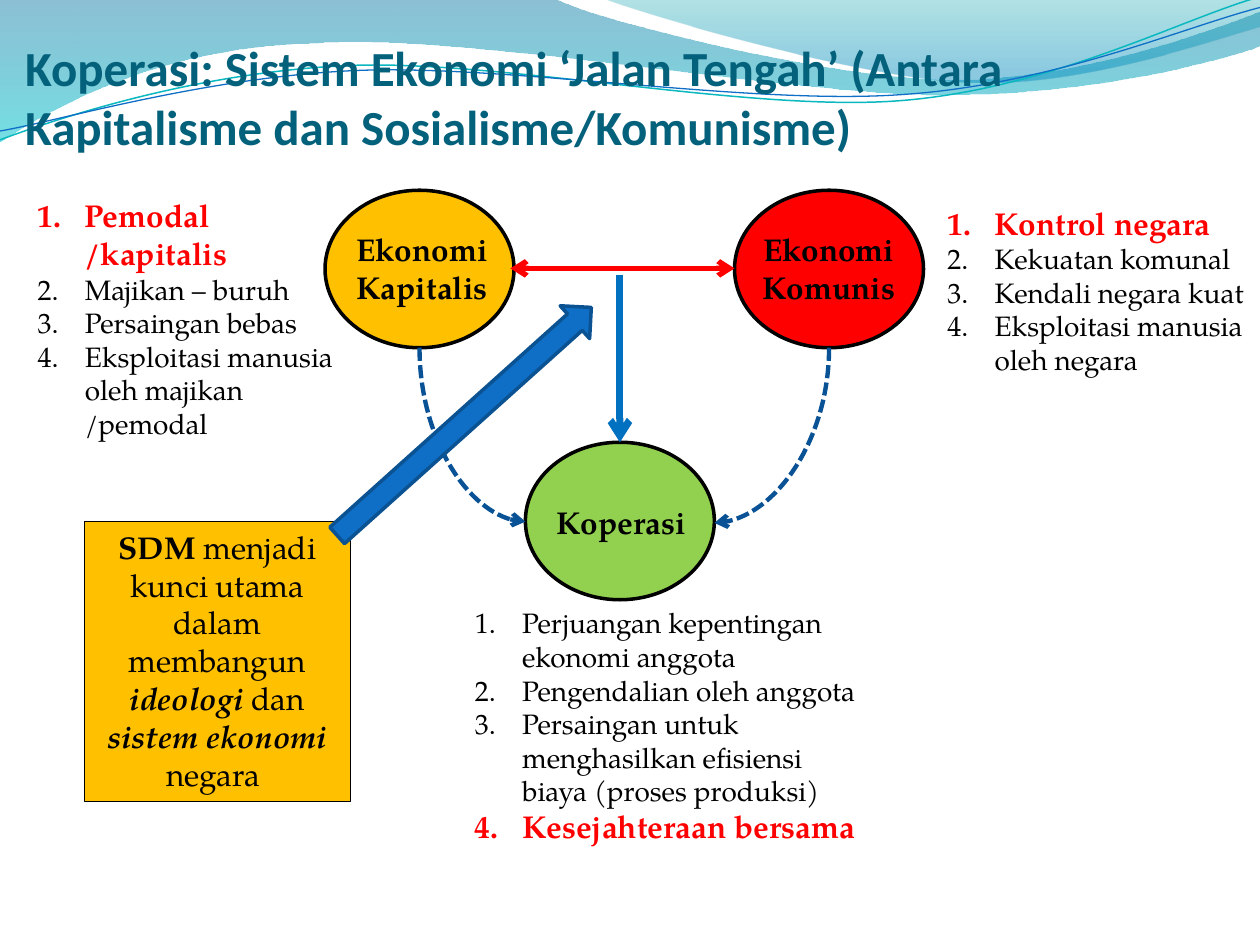
from math import cos, radians, sin
from typing import NamedTuple, Optional

from lxml.etree import SubElement
from pptx import Presentation
from pptx.dml.color import RGBColor
from pptx.enum.dml import MSO_LINE
from pptx.enum.shapes import MSO_CONNECTOR as LINK, MSO_SHAPE as SHAPE
from pptx.enum.text import MSO_ANCHOR as ANCHOR, MSO_AUTO_SIZE as FIT, PP_ALIGN as ALIGN
from pptx.oxml.ns import qn
from pptx.util import Inches, Pt

BLACK = RGBColor(0x00, 0x00, 0x00)
RED = RGBColor(0xFF, 0x00, 0x00)
AMBER = RGBColor(0xFF, 0xC0, 0x00)
GREEN = RGBColor(0x92, 0xD0, 0x50)
TITLE_TEAL = RGBColor(0x04, 0x61, 0x7B)
LINE_TEAL = RGBColor(0x0A, 0xB8, 0xBF)
BLUE = RGBColor(0x0F, 0x6F, 0xC6)
DARK_BLUE = RGBColor(0x09, 0x52, 0x95)
ARROW_EDGE = RGBColor(0x0B, 0x52, 0x92)
DOWN_BLUE = RGBColor(0x00, 0x70, 0xC0)
SERIF = "TeX Gyre Pagella"
INDENT = Inches(3 / 8)
TILT = -2.7


class Run(NamedTuple):
    text: str
    bold: bool = False
    italic: bool = False
    size: float = 18
    color: RGBColor = BLACK


class Stop(NamedTuple):
    position: float
    color: RGBColor
    opacity: int


class Wave(NamedTuple):
    start: tuple
    segments: list
    stops: Optional[list] = None
    color: Optional[RGBColor] = None
    width: float = 0
    pivot: tuple = (0, 0)


class System(NamedTuple):
    label: str
    left: float
    top: float
    color: RGBColor
    label_box: tuple


class Traits(NamedTuple):
    box: tuple
    items: list


def key_point(text: str) -> Run:
    return Run(text, bold=True, color=RED)


def point(text: str) -> Run:
    return Run(text, size=16)


WAVES = [
    Wave((0, 0), [(4.4, -0.01), (4.76, 0.17, 6.64, 0.63, 7.58, 0.63),
                  (8.53, 0.63, 9.58, 0.26, 10, 0.09), (10.01, 0.36),
                  (9.83, 0.44, 8.7, 0.76, 7.46, 0.75), (6.22, 0.75, 3.82, 0.28, 2.57, 0.34),
                  (1.29, 0.36, 0.46, 0.83, -0.01, 1.13), (0, 0)],
         [Stop(0, RGBColor(0x00, 0x74, 0xA1), 45), Stop(1, RGBColor(0x00, 0xC6, 0xCF), 55)]),
    Wave((4.79, -0.01), [(5.09, 0.11, 6.82, 0.62, 7.69, 0.65),
                         (8.56, 0.69, 9.61, 0.32, 10, 0.21), (10, 0), (4.79, -0.01)],
         [Stop(0, RGBColor(0x00, 0xA1, 0xA9), 30), Stop(0.8, RGBColor(0x00, 0x8B, 0xBF), 45)]),
    Wave((0, 1.11), [(0.48, 0.93, 1.58, 0.57, 2.77, 0.52), (3.95, 0.47, 5.93, 0.89, 7.13, 0.8),
                     (8.33, 0.71, 9.38, 0.15, 9.98, -0.02)],
         color=LINE_TEAL, width=0.85, pivot=(4.99, 0.58)),
    Wave((0, 1.04), [(0.47, 0.96, 1.64, 0.61, 2.83, 0.56), (4.03, 0.51, 5.97, 0.84, 7.17, 0.75),
                     (8.36, 0.67, 9.41, 0.21, 10, 0.06)],
         color=BLUE, width=0.75, pivot=(5, 0.59)),
]
SYSTEMS = [
    System("Ekonomi Kapitalis", 2.58, 1.51, AMBER, (2.64, 1.78, 1.42, 0.71)),
    System("Ekonomi Komunis", 5.83, 1.51, RED, (5.83, 1.78, 1.5, 0.71)),
    System("Koperasi ", 4.17, 3.51, GREEN, (4.25, 3.94, 1.42, 0.4)),
]
TRAITS = [
    Traits((0.2, 1.51, 2.58, 1.75),
           [key_point("Pemodal /kapitalis"), point("Majikan – buruh"),
            point("Persaingan bebas"), point("Eksploitasi manusia oleh majikan /pemodal")]),
    Traits((7.42, 1.57, 2.58, 1.48),
           [key_point("Kontrol negara"), point("Kekuatan komunal"),
            point("Kendali negara kuat"), point("Eksploitasi manusia oleh negara")]),
    Traits((3.67, 4.76, 3.25, 2.02),
           [point("Perjuangan kepentingan ekonomi anggota"), point("Pengendalian oleh anggota"),
            point("Persaingan untuk menghasilkan efisiensi biaya (proses produksi)"),
            key_point("Kesejahteraan bersama")]),
]
HR_MESSAGE = [Run("SDM", bold=True), Run(" menjadi kunci utama dalam membangun "),
              Run("ideologi ", bold=True, italic=True), Run("dan"),
              Run(" sistem ekonomi ", bold=True, italic=True), Run("negara ")]


def write(frame, paragraphs: list, font=SERIF, align=ALIGN.LEFT, anchor=ANCHOR.TOP,
          fit=FIT.SHAPE_TO_FIT_TEXT, numbered=False) -> None:
    frame.word_wrap = True
    frame.auto_size = fit
    frame.vertical_anchor = anchor
    for index, runs in enumerate(paragraphs):
        paragraph = frame.paragraphs[0] if index == 0 else frame.add_paragraph()
        paragraph.alignment = align
        if numbered:
            properties = paragraph._p.get_or_add_pPr()
            properties.set("marL", str(INDENT))
            properties.set("indent", str(-INDENT))
            SubElement(properties, qn("a:buAutoNum"), type="arabicPeriod")
        for item in runs:
            run = paragraph.add_run()
            run.text = item.text
            run.font.name = font
            run.font.size = Pt(item.size)
            run.font.bold = item.bold
            run.font.italic = item.italic
            run.font.color.rgb = item.color


def add_text(slide, box: tuple, paragraphs: list, **options):
    frame = slide.shapes.add_textbox(*map(Inches, box)).text_frame
    write(frame, paragraphs, **options)
    return frame


def add_figure(slide, kind, box: tuple, fill: RGBColor, edge: RGBColor, width: float):
    figure = slide.shapes.add_shape(kind, *map(Inches, box))
    figure.shadow.inherit = False
    figure.fill.solid()
    figure.fill.fore_color.rgb = fill
    figure.line.color.rgb = edge
    figure.line.width = Pt(width)
    return figure


def place(x: float, y: float, pivot: tuple, turn: float) -> tuple:
    dx, dy, angle = x - pivot[0], y - pivot[1], radians(turn)
    return (Inches(pivot[0] + dx * cos(angle) - dy * sin(angle)),
            Inches(pivot[1] + dx * sin(angle) + dy * cos(angle)))


def add_wave(slide, wave: Wave) -> None:
    turn = 0 if wave.stops else TILT
    corners = [place(x, y, wave.pivot, -turn) for segment in [wave.start] + wave.segments
               for x, y in zip(segment[::2], segment[1::2])]
    builder = slide.shapes.build_freeform(*corners[0])
    builder.add_line_segments(corners[1:], close=bool(wave.stops))
    band = builder.convert_to_shape()
    band.shadow.inherit = False
    band.rotation = turn
    steps = iter(list(band._element.spPr.iter(qn("a:lnTo"))))
    for segment in wave.segments:
        first = next(steps)
        if len(segment) == 6:
            first.tag = qn("a:cubicBezTo")
            for follower in (next(steps), next(steps)):
                first.append(follower[0])
                follower.getparent().remove(follower)
    if not wave.stops:
        band.fill.background()
        band.line.color.rgb = wave.color
        band.line.width = Pt(wave.width)
        return
    band.line.fill.background()
    band.fill.gradient()
    band.fill.gradient_angle = 270
    for target, stop in zip(band.fill.gradient_stops, wave.stops):
        target.position = stop.position
        target.color.rgb = stop.color
    for color, stop in zip(band._element.spPr.iter(qn("a:srgbClr")), wave.stops):
        SubElement(color, qn("a:alpha"), val=str(stop.opacity * 1000))


def add_arrow(slide, start: tuple, end: tuple, color: RGBColor, width: float,
              both_ends=False, kind=LINK.STRAIGHT):
    arrow = slide.shapes.add_connector(kind, *map(Inches, start + end))
    arrow.line.color.rgb = color
    arrow.line.width = Pt(width)
    if kind == LINK.CURVE:
        arrow.line.dash_style = MSO_LINE.SQUARE_DOT
    properties = arrow._element.spPr
    stroke = properties.find(qn("a:ln"))
    for tag in ("a:headEnd", "a:tailEnd") if both_ends else ("a:tailEnd",):
        SubElement(stroke, qn(tag), type="arrow")
    SubElement(properties, qn("a:effectLst"))
    return arrow


def add_bend(slide, start: tuple, end: tuple) -> None:
    (x1, y1), (x2, y2) = start, end
    middle_x, middle_y = (x1 + x2) / 2, (y1 + y2) / 2
    side = -1 if x2 > x1 else 1
    reach, rise = side * (y2 - y1) / 2, abs(x2 - x1) / 2
    bend = add_arrow(slide, (middle_x - reach, middle_y - rise),
                     (middle_x + reach, middle_y + rise), DARK_BLUE, 2.5, kind=LINK.CURVE)
    properties = bend._element.spPr
    properties.find(qn("a:xfrm")).set("rot", str((side * 90 % 360) * 60000))
    properties.find(qn("a:prstGeom")).set("prst", "curvedConnector2")


def main() -> None:
    """Build the slide on the cooperative as a middle way between two systems."""
    deck = Presentation()
    deck.slide_width, deck.slide_height = Inches(10), Inches(7.5)
    slide = deck.slides.add_slide(deck.slide_layouts[6])
    for wave in WAVES:
        add_wave(slide, wave)
    title = Run("Koperasi: Sistem Ekonomi ‘Jalan Tengah’ (Antara Kapitalisme dan "
                "Sosialisme/Komunisme)", bold=True, size=28, color=TITLE_TEAL)
    heading = add_text(slide, (0.2, 0.17, 9.53, 1.06), [[title]], font="Calibri",
                       anchor=ANCHOR.BOTTOM, fit=FIT.NONE)
    heading.margin_left = heading.margin_right = heading.margin_bottom = 0
    for system in SYSTEMS:
        add_figure(slide, SHAPE.OVAL, (system.left, system.top, 1.5, 1.25),
                   system.color, BLACK, 2)
        add_text(slide, system.label_box, [[Run(system.label, bold=True)]], align=ALIGN.CENTER)
    add_arrow(slide, (4.05, 2.13), (5.83, 2.13), RED, 3, both_ends=True)
    for traits in TRAITS:
        add_text(slide, traits.box, [[item] for item in traits.items], numbered=True)
    add_arrow(slide, (4.92, 2.18), (4.92, 3.51), DOWN_BLUE, 4)
    add_bend(slide, (3.33, 2.76), (4.17, 4.14))
    add_bend(slide, (6.58, 2.76), (5.67, 4.15))
    message = add_figure(slide, SHAPE.RECTANGLE, (0.67, 4.14, 2.11, 2.22), AMBER, BLACK, 0.75)
    write(message.text_frame, [HR_MESSAGE], align=ALIGN.CENTER)
    pointer = add_figure(slide, SHAPE.RIGHT_ARROW, (2.33, 3.17, 2.71, 0.35), BLUE, ARROW_EDGE, 2)
    pointer.rotation = 318.1
    deck.save("out.pptx")


if __name__ == "__main__":
    main()
